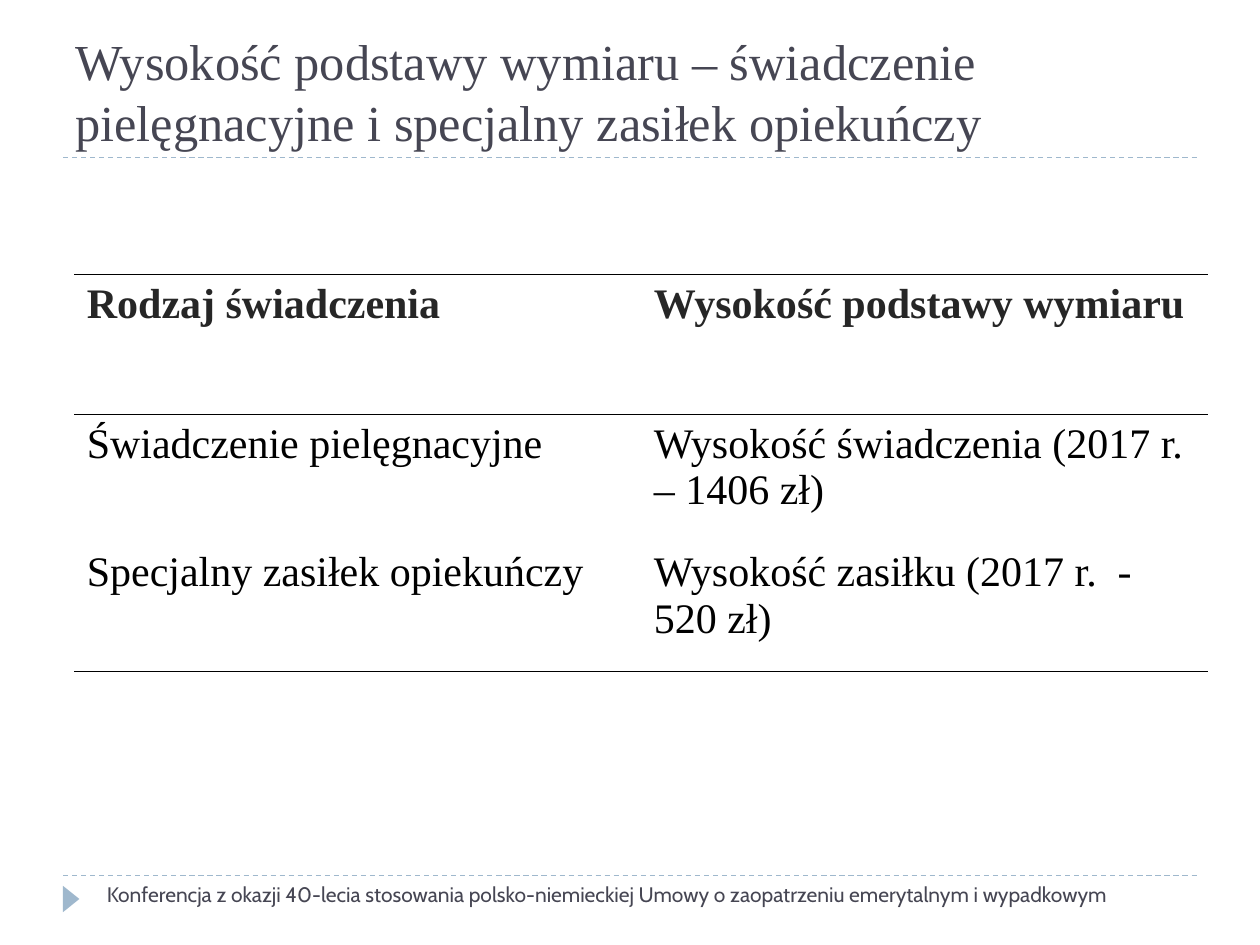
from dataclasses import dataclass

from lxml import etree
from pptx import Presentation
from pptx.dml.color import RGBColor
from pptx.enum.dml import MSO_LINE
from pptx.enum.shapes import MSO_CONNECTOR, MSO_SHAPE
from pptx.enum.text import MSO_ANCHOR
from pptx.oxml.ns import qn
from pptx.util import Pt

DASH = MSO_LINE.DASH
STRAIGHT = MSO_CONNECTOR.STRAIGHT
TRIANGLE = MSO_SHAPE.ISOSCELES_TRIANGLE
TOP, BOTTOM = MSO_ANCHOR.TOP, MSO_ANCHOR.BOTTOM


@dataclass(frozen=True)
class Theme:
    accent: str = "9FB8CD"
    heading: str = "464653"
    table_head: str = "262626"
    body: str = "000000"
    serif: str = "Times New Roman"
    sans: str = "Cabin"
    title_size: float = 28.8
    table_size: float = 24
    footer_size: float = 12


theme = Theme()


def write(tf, text, *, size, font, color, bold=False, anchor=TOP):
    tf.word_wrap = True
    tf.vertical_anchor = anchor
    r = tf.paragraphs[0].add_run()
    r.text = text
    r.font.size = Pt(size)
    r.font.name = font
    r.font.bold = bold
    r.font.color.rgb = RGBColor.from_string(color)


def set_borders(cell, ruled):
    """Rule the named edges ("T", "B") in black and clear the others."""
    tc_pr = cell._tc.get_or_add_tcPr()
    for edge in "LRTB":
        ln = etree.SubElement(tc_pr, qn(f"a:ln{edge}"), w=str(Pt(1)))
        if edge in ruled:
            fill = etree.SubElement(ln, qn("a:solidFill"))
            etree.SubElement(fill, qn("a:srgbClr"), val=theme.body)
        else:
            etree.SubElement(ln, qn("a:noFill"))


prs = Presentation()
prs.slide_width, prs.slide_height = Pt(720), Pt(540)
s = prs.slides.add_slide(prs.slide_layouts[6])

# Dashed rules under the title and above the footer
for y in (500.4, 90):
    line = s.shapes.add_connector(STRAIGHT, Pt(36), Pt(y), Pt(684), Pt(y))
    line.line.color.rgb = RGBColor.from_string(theme.accent)
    line.line.width = Pt(0.75)
    line.line.dash_style = DASH
    etree.SubElement(line._element.spPr, qn("a:effectLst"))

# Footer marker
sp = s.shapes.add_shape(TRIANGLE, Pt(33.1), Pt(509), Pt(15.1), Pt(9.4))
sp.rotation = 90
sp.shadow.inherit = False
sp.fill.solid()
sp.fill.fore_color.rgb = RGBColor.from_string(theme.accent)
sp.line.fill.background()

# Title
title = s.shapes.add_textbox(Pt(36), Pt(12.2), Pt(648), Pt(77.8))
write(title.text_frame,
      "Wysokość podstawy wymiaru – świadczenie pielęgnacyjne i specjalny zasiłek opiekuńczy",
      size=theme.title_size, font=theme.serif, color=theme.heading, anchor=BOTTOM)

# Benefits table
rows = [
    ("Rodzaj świadczenia", "Wysokość podstawy wymiaru"),
    ("Świadczenie pielęgnacyjne", "Wysokość świadczenia (2017 r. – 1406 zł)"),
    ("Specjalny zasiłek opiekuńczy", "Wysokość zasiłku (2017 r.  - 520 zł)"),
]
row_heights = (80, 73.5, 73.5)
row_rules = ("TB", "T", "B")
table = s.shapes.add_table(len(rows), 2, Pt(42.4), Pt(156.8),
                           Pt(648), Pt(sum(row_heights))).table
table.horz_banding = False
for i, texts in enumerate(rows):
    table.rows[i].height = Pt(row_heights[i])
    for j, text in enumerate(texts):
        cell = table.cell(i, j)
        set_borders(cell, row_rules[i])
        cell.fill.background()
        write(cell.text_frame, text, size=theme.table_size, font=theme.serif,
              color=theme.body if i else theme.table_head, bold=i == 0)

# Footer
footer = s.shapes.add_textbox(Pt(54), Pt(500.4), Pt(629.3), Pt(28.8))
write(footer.text_frame,
      "Konferencja z okazji 40-lecia stosowania polsko-niemieckiej Umowy o zaopatrzeniu "
      "emerytalnym i wypadkowym",
      size=theme.footer_size, font=theme.sans, color=theme.heading)

prs.save("out.pptx")
